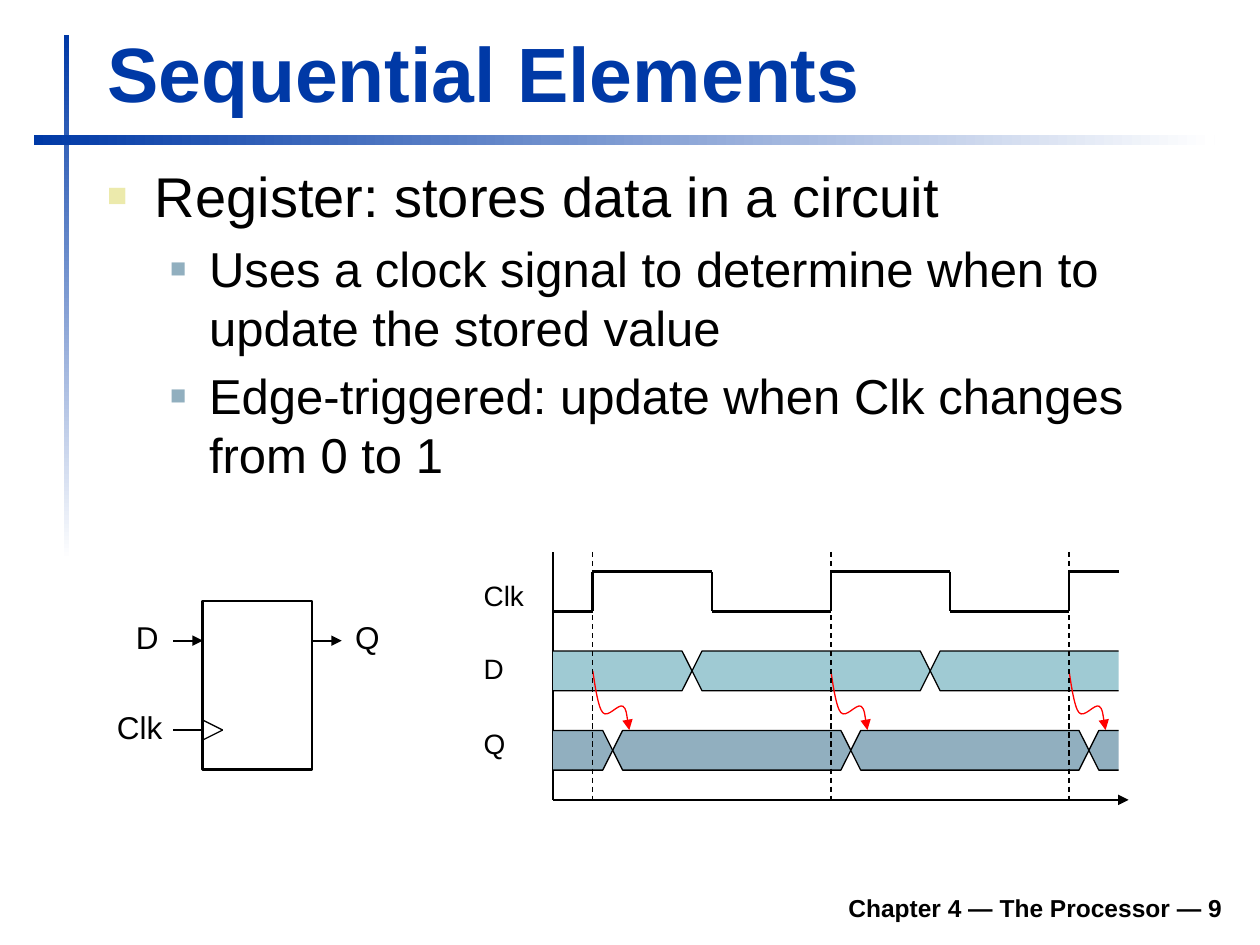
from itertools import pairwise

from lxml import etree
from pptx import Presentation
from pptx.dml.color import RGBColor
from pptx.enum.dml import MSO_LINE
from pptx.enum.shapes import MSO_CONNECTOR, MSO_SHAPE
from pptx.enum.text import MSO_ANCHOR, MSO_AUTO_SIZE, PP_ALIGN
from pptx.oxml.ns import qn
from pptx.util import Inches, Pt

STRAIGHT = MSO_CONNECTOR.STRAIGHT
RECTANGLE = MSO_SHAPE.RECTANGLE
DASH = MSO_LINE.DASH
BOTTOM, TOP = MSO_ANCHOR.BOTTOM, MSO_ANCHOR.TOP
LEFT, RIGHT = PP_ALIGN.LEFT, PP_ALIGN.RIGHT
NO_FIT, FIT_SHAPE = MSO_AUTO_SIZE.NONE, MSO_AUTO_SIZE.SHAPE_TO_FIT_TEXT

COLORS = {
    "title": "0039A6", "white": "FFFFFF", "black": "000000",
    "bullet": "ECEAAC", "sub_bullet": "91AFBF",
    "input": "9FCAD3", "output": "91AFBF", "trigger": "FF0000",
}
FONT = "Arial"
UNIT = 0.1575
REGISTER_ORIGIN = (1.61, 4.77)
TIMING_ORIGIN = (4.39, 4.38)
PERIOD = 12
RISES = [2, 2 + PERIOD, 2 + 2 * PERIOD]
END = 28.5
AXIS = 12.5
TRIGGER_CURVE = [
    (0.06, 0.38), (0.25, 1.84), (0.5, 2.1),
    (0.76, 2.4), (1.27, 1.65), (1.52, 1.78),
    (1.7, 1.9), (1.78, 2.73), (1.84, 2.98),
]
BULLETS = [
    ("Register: stores data in a circuit", 0),
    ("Uses a clock signal to determine when to update the stored value", 1),
    ("Edge-triggered: update when Clk changes from 0 to 1", 1),
]
LEVELS = [(32, 0.38, -0.38, "bullet", 60), (28, 0.81, -0.31, "sub_bullet", 55)]


def color(name):
    """Return the named colour."""
    return RGBColor.from_string(COLORS[name])


def grid_point(origin, column, row):
    """Turn a column and row of a drawing into slide coordinates."""
    return Inches(origin[0] + column * UNIT), Inches(origin[1] + row * UNIT)


def format_paragraph(paragraph, size, name="black", bold=False, align=LEFT):
    """Set the alignment and the font of a paragraph's runs."""
    paragraph.alignment = align
    for run in paragraph.runs:
        run.font.name, run.font.size, run.font.bold = FONT, Pt(size), bold
        run.font.color.rgb = color(name)


def place(shape, left, top, width, height):
    """Move and size a shape in inches."""
    shape.left, shape.top = Inches(left), Inches(top)
    shape.width, shape.height = Inches(width), Inches(height)


def style_line(shape, width, name="black", arrow=False):
    """Set a line's colour and width, and end it with an arrowhead if asked."""
    shape.line.color.rgb = color(name)
    shape.line.width = Pt(width)
    if arrow:
        line = shape.line._get_or_add_ln()
        etree.SubElement(line, qn("a:tailEnd"), type="triangle")


def add_line(shapes, origin, start, end, width=0.75, arrow=False, dashed=False):
    """Add a straight line between two grid points."""
    line = shapes.add_connector(
        STRAIGHT, *grid_point(origin, *start), *grid_point(origin, *end))
    style_line(line, width)
    if dashed:
        line.line.dash_style = DASH
    if arrow:
        style_line(line, width, arrow=True)
    etree.SubElement(line._element.spPr, qn("a:effectLst"))


def add_outline(shapes, points, closed=False):
    """Add a freeform through points of the timing grid."""
    start, *others = [grid_point(TIMING_ORIGIN, *point) for point in points]
    builder = shapes.build_freeform(*start)
    builder.add_line_segments(others, close=closed)
    shape = builder.convert_to_shape()
    shape.shadow.inherit = False
    return shape


def add_band(shapes, top, crossings, name):
    """Add the value segments of a signal, split at its crossings."""
    middle, bottom = top + 1, top + 2
    for left, right in pairwise([0, *crossings, END]):
        start = [(left, top)] if left == 0 else [(left + 0.5, top)]
        points = start + ([(right, top), (right, bottom)] if right == END else
                          [(right - 0.5, top), (right, middle), (right - 0.5, bottom)])
        if left == 0:
            points.append((left, bottom))
        else:
            points += [(left + 0.5, bottom), (left, middle)]
        if right == END:
            points = points[2:] + points[:2]
        band = add_outline(shapes, points, closed=0 < left and right < END)
        band.fill.solid()
        band.fill.fore_color.rgb = color(name)
        style_line(band, 0.75)


def add_trigger(shapes, column):
    """Add the curved arrow from a clock edge to the output change."""
    points = [(column, 6)] + [(column + x, 6 + y) for x, y in TRIGGER_CURVE]
    shape = add_outline(shapes, points)
    shape.fill.background()
    style_line(shape, 0.75, "trigger", arrow=True)
    path = shape._element.find(".//" + qn("a:path"))
    segments = path.findall(qn("a:lnTo"))
    for first in range(0, len(segments), 3):
        curve = etree.SubElement(path, qn("a:cubicBezTo"))
        for segment in segments[first:first + 3]:
            curve.append(segment[0])
            path.remove(segment)


def add_label(shapes, text, left, top, width, height, size):
    """Add a one-line signal name."""
    box = shapes.add_textbox(
        Inches(left), Inches(top), Inches(width), Inches(height))
    frame = box.text_frame
    frame.word_wrap, frame.auto_size = False, FIT_SHAPE
    frame.text = text
    format_paragraph(frame.paragraphs[0], size)


def add_gradient_bar(slide, left, top, width, height, angle):
    """Add a decorative bar fading to white."""
    bar = slide.shapes.add_shape(RECTANGLE, 0, 0, 0, 0)
    place(bar, left, top, width, height)
    bar.shadow.inherit = False
    bar.line.fill.background()
    bar.fill.gradient()
    bar.fill.gradient_angle = angle
    for position, (stop, name) in enumerate(
            zip(bar.fill.gradient_stops, ("title", "white"))):
        stop.position, stop.color.rgb = position, color(name)


def fill_title(slide):
    """Write the title."""
    title = slide.shapes.title
    place(title, 0.75, 0.16, 9.03, 0.83)
    title.text_frame.text = "Sequential Elements"
    title.text_frame.vertical_anchor = BOTTOM
    title.text_frame.auto_size = NO_FIT
    format_paragraph(title.text_frame.paragraphs[0], 44, "title", bold=True)


def fill_body(slide):
    """Write the bulleted list."""
    body = slide.placeholders[1]
    place(body, 0.75, 1.23, 9.05, 3.02)
    frame = body.text_frame
    frame.auto_size, frame.vertical_anchor = NO_FIT, TOP
    frame.text = "\n".join(text for text, level in BULLETS)
    for paragraph, (text, level) in zip(frame.paragraphs, BULLETS):
        size, margin, indent, bullet, share = LEVELS[level]
        paragraph.level = level
        format_paragraph(paragraph, size)
        properties = paragraph._p.get_or_add_pPr()
        properties.set("marL", str(Inches(margin)))
        properties.set("indent", str(Inches(indent)))
        tint = etree.SubElement(properties, qn("a:buClr"))
        etree.SubElement(tint, qn("a:srgbClr"), val=COLORS[bullet])
        etree.SubElement(properties, qn("a:buSzPct"), val=str(share * 1000))
        etree.SubElement(properties, qn("a:buFont"), typeface=FONT)
        etree.SubElement(properties, qn("a:buChar"), char="■")


def add_footer(slide):
    """Add the chapter line at the bottom right."""
    box = slide.shapes.add_textbox(
        Inches(1.85), Inches(6.98), Inches(7.95), Inches(0.39))
    frame = box.text_frame
    frame.word_wrap, frame.vertical_anchor = True, BOTTOM
    frame.text = "Chapter 4 — The Processor — 9"
    format_paragraph(frame.paragraphs[0], 14, bold=True, align=RIGHT)


def add_register(slide):
    """Draw the register symbol with its pins."""
    shapes = slide.shapes.add_group_shape().shapes
    box = shapes.add_shape(RECTANGLE, *grid_point(REGISTER_ORIGIN, 0, 0),
                           Inches(5.5 * UNIT), Inches(8.5 * UNIT))
    box.shadow.inherit = False
    box.fill.background()
    style_line(box, 1.5)
    for start, end in (((-1.5, 2), (0, 2)), ((5.5, 2), (7, 2))):
        add_line(shapes, REGISTER_ORIGIN, start, end, 1, arrow=True)
    for start, end in (((-1.5, 6.5), (0, 6.5)), ((0, 6), (1, 6.5)), ((0, 7), (1, 6.5))):
        add_line(shapes, REGISTER_ORIGIN, start, end)
    for text, left, top, width in (
            ("D", 0.98, 4.86, 0.38), ("Clk", 0.83, 5.57, 0.56), ("Q", 2.72, 4.86, 0.4)):
        add_label(shapes, text, left, top, width, 0.4, 18)


def add_timing(slide):
    """Draw the timing diagram of clock, input and output."""
    shapes = slide.shapes.add_group_shape().shapes
    clock = [(0, 3)]
    for rise in RISES:
        fall = rise + PERIOD / 2
        clock += [(rise, 3), (rise, 1), (min(fall, END), 1)]
        if fall < END:
            clock.append((fall, 3))
    for start, end in pairwise(clock):
        add_line(shapes, TIMING_ORIGIN, start, end, 1.5)
    add_line(shapes, TIMING_ORIGIN, (0, AXIS), (29, AXIS), arrow=True)
    add_line(shapes, TIMING_ORIGIN, (0, AXIS), (0, 0))
    for text, top, width in (("Clk", 4.54, 0.52), ("D", 5.12, 0.36), ("Q", 5.72, 0.38)):
        add_label(shapes, text, 3.74, top, width, 0.37, 16)
    add_band(shapes, 5, [rise + 5 for rise in RISES[:2]], "input")
    add_band(shapes, 9, [rise + 1 for rise in RISES], "output")
    for rise in RISES:
        add_trigger(shapes, rise)
        add_line(shapes, TIMING_ORIGIN, (rise, 0), (rise, AXIS), dashed=True)


def main():
    """Build and save the slide."""
    presentation = Presentation()
    presentation.slide_width, presentation.slide_height = Inches(10), Inches(7.5)
    slide = presentation.slides.add_slide(presentation.slide_layouts[1])
    add_gradient_bar(slide, 0.51, 0.28, 0.04, 4.17, 270)
    add_gradient_bar(slide, 0.27, 1.07, 9.37, 0.08, 0)
    add_footer(slide)
    fill_title(slide)
    fill_body(slide)
    add_register(slide)
    add_timing(slide)
    presentation.save("out.pptx")


if __name__ == "__main__":
    main()
